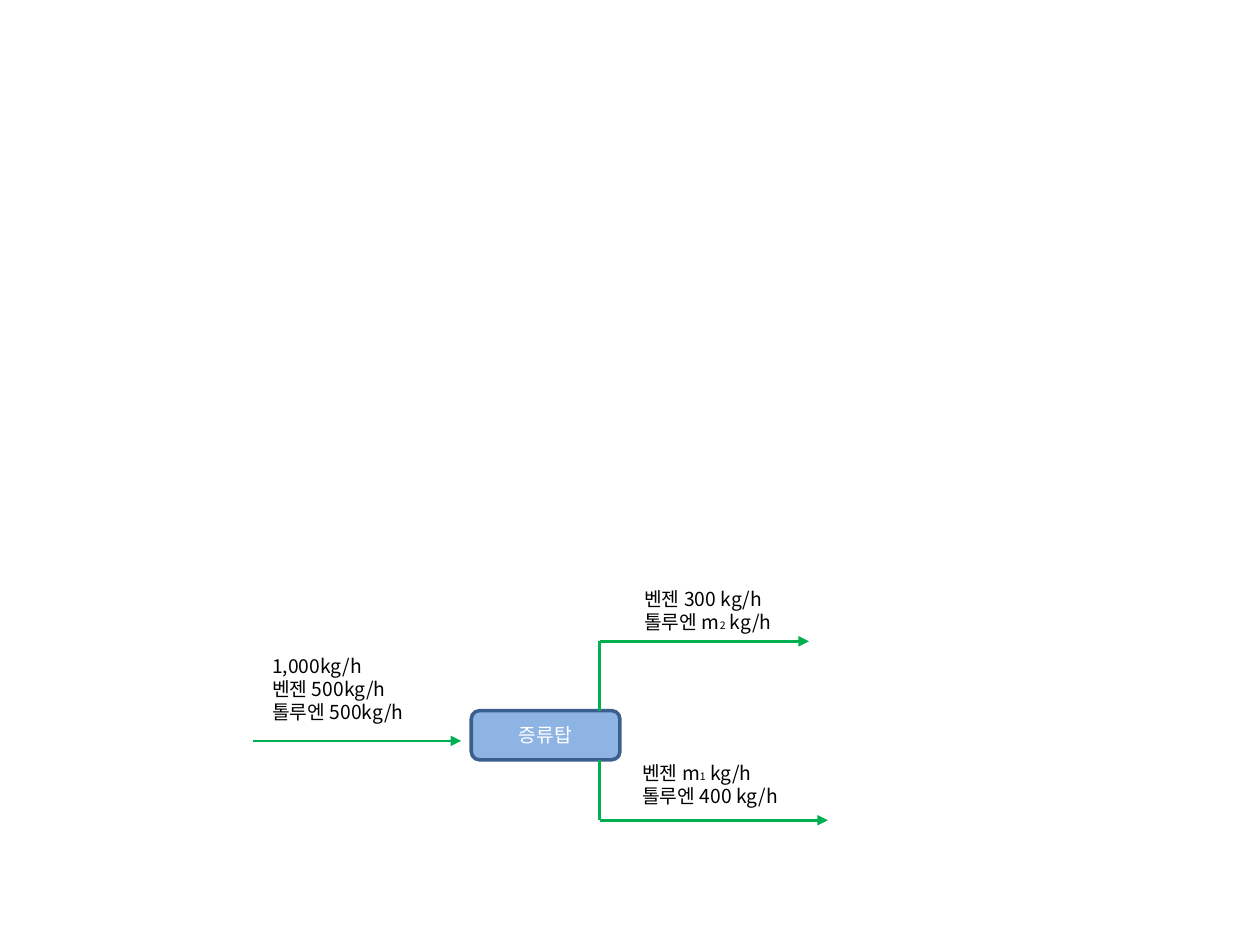
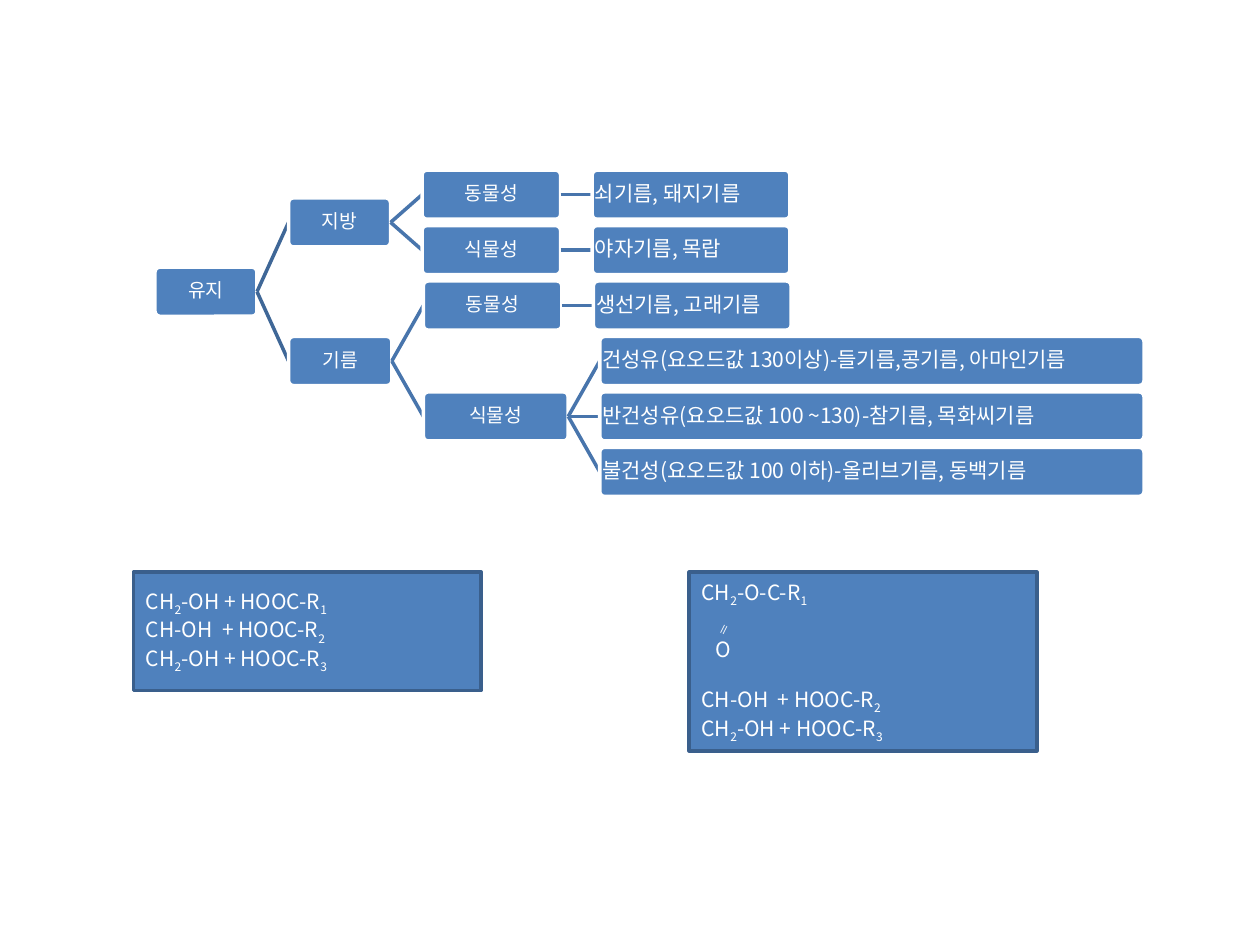
"""Build two chemistry slides: a distillation balance and a classification of fats and oils."""
import dataclasses
import itertools

import lxml.etree
import pptx
import pptx.dml.color
import pptx.enum.shapes
import pptx.enum.text
import pptx.oxml.ns
import pptx.util

EMU_PER_PX = 9144
SHAPE = pptx.enum.shapes.MSO_SHAPE
ALIGN = pptx.enum.text.PP_ALIGN


@dataclasses.dataclass(frozen=True)
class Theme:
    font: str = "Noto Sans CJK KR"
    white: str = "FFFFFF"
    black: str = "000000"
    column_fill: str = "8EB4E3"
    fill: str = "4F81BD"
    outline: str = "3A5F8C"
    flow: str = "00B050"
    root_link: str = "3F6797"
    link: str = "4875AC"
    body: int = 11
    large: int = 12
    tiny: int = 6
    border: float = 2
    flow_width: float = 1.5


THEME = Theme()


@dataclasses.dataclass
class Node:
    label: str
    width: int
    children: tuple = ()
    row: float = 0


OILS = Node("유지", 81, (
    Node("지방", 81, (
        Node("동물성", 110, (Node("쇠기름, 돼지기름", 157),)),
        Node("식물성", 110, (Node("야자기름, 목랍", 157),)),
    )),
    Node("기름", 82, (
        Node("동물성", 110, (Node("생선기름, 고래기름", 157),)),
        Node("식물성", 115, (
            Node("건성유(요오드값 130이상)-들기름,콩기름, 아마인기름", 432),
            Node("반건성유(요오드값 100 ~130)-참기름, 목화씨기름", 432),
            Node("불건성(요오드값 100 이하)-올리브기름, 동백기름", 432),
        )),
    )),
))
TREE_LEFT, TREE_TOP, ROW_PITCH, NODE_HEIGHT, NODE_GAP = 123, 135, 44, 39, 25


def px(n):
    return pptx.util.Emu(round(n * EMU_PER_PX))


def rgb(code):
    return pptx.dml.color.RGBColor.from_string(code)


def add_box(s, kind, at, fill=None, line=None):
    sp = s.shapes.add_shape(kind, *map(px, at))
    sp.shadow.inherit = False
    if fill:
        sp.fill.solid()
        sp.fill.fore_color.rgb = rgb(fill)
    else:
        sp.fill.background()
    if line:
        sp.line.color.rgb = rgb(line)
        sp.line.width = pptx.util.Pt(THEME.border)
    else:
        sp.line.fill.background()
    sp.text_frame.vertical_anchor = pptx.enum.text.MSO_ANCHOR.MIDDLE
    return sp


def style_paragraph(p, size, color, align):
    p.alignment = align
    p.font.name = THEME.font
    p.font.size = pptx.util.Pt(size)
    p.font.color.rgb = rgb(color)
    props = p._p.pPr.find(pptx.oxml.ns.qn("a:defRPr"))
    ea = lxml.etree.SubElement(props, pptx.oxml.ns.qn("a:ea"))
    ea.set("typeface", THEME.font)


def lower(r, size=None):
    """Make a run an index, by a smaller size or by a subscript baseline."""
    if size:
        r.font.size = pptx.util.Pt(size)
    else:
        r._r.get_or_add_rPr().set("baseline", "-25000")


def write(sp, lines, size, color, align=ALIGN.LEFT, index_size=None):
    """Write lines in which the character after each underscore is an index."""
    tf = sp.text_frame
    for i, line in enumerate(lines):
        p = tf.add_paragraph() if i else tf.paragraphs[0]
        style_paragraph(p, size, color, align)
        plain, *indexed = line.split("_")
        if plain:
            p.add_run().text = plain
        for part in indexed:
            r = p.add_run()
            r.text = part[0]
            lower(r, index_size)
            if part[1:]:
                p.add_run().text = part[1:]
    return tf.paragraphs


def add_line(s, start, end, color, width, arrow=False):
    c = s.shapes.add_connector(pptx.enum.shapes.MSO_CONNECTOR.STRAIGHT, *map(px, start + end))
    c.line.color.rgb = rgb(color)
    c.line.width = pptx.util.Pt(width)
    if arrow:
        tail = lxml.etree.SubElement(c.line._get_or_add_ln(), pptx.oxml.ns.qn("a:tailEnd"))
        tail.set("type", "triangle")
    lxml.etree.SubElement(c._element.spPr, pptx.oxml.ns.qn("a:effectLst"))
    return c


def add_stream_label(s, at, lines):
    sp = add_box(s, SHAPE.ROUNDED_RECTANGLE, at)
    write(sp, lines, THEME.body, THEME.black, index_size=THEME.tiny)


def add_flow(s, start, end, arrow=True):
    add_line(s, start, end, THEME.flow, THEME.flow_width, arrow)


def assign_rows(node, rows):
    """Give each leaf the next row and centre each parent on its children."""
    for child in node.children:
        assign_rows(child, rows)
    if node.children:
        node.row = sum(child.row for child in node.children) / len(node.children)
    else:
        node.row = next(rows)


def add_tree(s, node, left, link_color=THEME.root_link):
    at = (left, TREE_TOP + ROW_PITCH * node.row, node.width, NODE_HEIGHT)
    sp = add_box(s, SHAPE.ROUNDED_RECTANGLE, at, THEME.fill, THEME.white)
    sp.adjustments[0] = 0.1
    tf = sp.text_frame
    tf.margin_left = tf.margin_top = tf.margin_right = tf.margin_bottom = px(1)
    if node.children:
        size, align = THEME.body, ALIGN.CENTER
    else:
        size, align = THEME.large, ALIGN.LEFT
    write(sp, [node.label], size, THEME.white, align)[0].line_spacing = 0.9
    for child in node.children:
        c = add_line(s, (0, 0), (0, 0), link_color, THEME.border)
        child_sp = add_tree(s, child, left + node.width + NODE_GAP, THEME.link)
        c.begin_connect(sp, 3)
        c.end_connect(child_sp, 1)
    return sp


def add_formula(s, at, lines):
    sp = add_box(s, SHAPE.RECTANGLE, at, THEME.fill, THEME.outline)
    return write(sp, lines, THEME.large, THEME.white)


def build_distillation(s):
    column = add_box(s, SHAPE.ROUNDED_RECTANGLE, (374, 564, 118, 39),
                     THEME.column_fill, THEME.outline)
    write(column, ["증류탑"], THEME.body, THEME.white, ALIGN.CENTER)
    add_stream_label(s, (203, 515, 161, 63), ["1,000kg/h", "벤젠 500kg/h", "톨루엔 500kg/h"])
    add_stream_label(s, (500, 469, 150, 31), ["벤젠 300 kg/h", "톨루엔 m_2 kg/h"])
    add_stream_label(s, (498, 603, 144, 39), ["벤젠 m_1 kg/h", "톨루엔 400 kg/h"])
    add_flow(s, (201, 588), (366, 588))
    for column_edge, y, end in ((564, 509, 642), (603, 651, 657)):
        add_flow(s, (476, column_edge), (476, y), arrow=False)
        add_flow(s, (476, y), (end, y))


def build_oils(s):
    assign_rows(OILS, itertools.count())
    add_tree(s, OILS, TREE_LEFT)
    shared = ["CH-OH  + HOOC-R_2", "CH_2-OH + HOOC-R_3"]
    add_formula(s, (106, 454, 276, 94), ["CH_2-OH + HOOC-R_1"] + shared)
    ester = add_formula(s, (547, 454, 276, 142), ["CH_2-O-C-R_1", "_∥", "O"] + shared)
    for p, indent in zip(ester[1:3], (13, 11)):
        p._p.pPr.set("marL", str(px(indent)))
    ester[3].space_before = pptx.util.Pt(14)


def main():
    prs = pptx.Presentation()
    prs.slide_width, prs.slide_height = px(1000), px(750)
    for build in (build_distillation, build_oils):
        build(prs.slides.add_slide(prs.slide_layouts[6]))
    prs.save("out.pptx")


if __name__ == "__main__":
    main()
